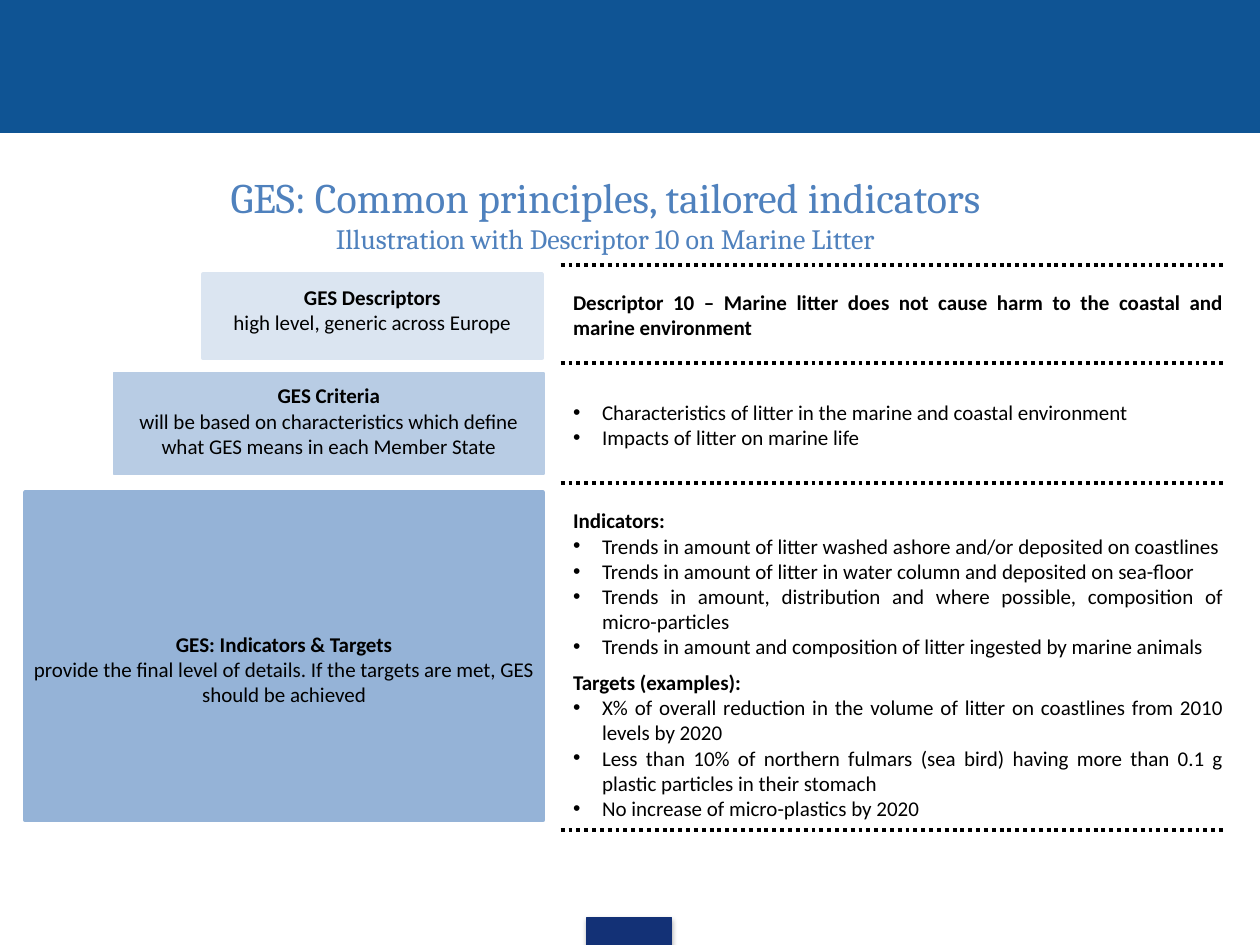
from lxml import etree
from pptx import Presentation
from pptx.dml.color import RGBColor
from pptx.enum.dml import MSO_LINE
from pptx.enum.shapes import MSO_CONNECTOR, MSO_SHAPE
from pptx.enum.text import MSO_ANCHOR, PP_ALIGN
from pptx.oxml.ns import qn
from pptx.util import Inches, Pt

RECTANGLE = MSO_SHAPE.RECTANGLE
STRAIGHT = MSO_CONNECTOR.STRAIGHT
DOTTED = MSO_LINE.ROUND_DOT  # saved as sysDot
TOP, MIDDLE = MSO_ANCHOR.TOP, MSO_ANCHOR.MIDDLE
CENTER, JUSTIFY = PP_ALIGN.CENTER, PP_ALIGN.JUSTIFY

COLORS = {
    "banner": "0F5494", "footer": "133176", "title": "4F81BD", "text": "000000",
    "descriptors": "DBE5F1", "criteria": "B8CCE4", "indicators": "95B3D7",
}

# Name, left, top, width, height, line width, top inset, heading, explanation
LEVELS = [
    ("descriptors", 1.61, 2.18, 2.69, 0.66, 2.5, 0.08, "GES Descriptors",
     "high level, generic across Europe"),
    ("criteria", 0.9, 2.96, 3.42, 0.8, 1, 0.08, "GES Criteria",
     "will be based on characteristics which define what GES means in each Member State"),
    ("indicators", 0.2, 3.91, 4.11, 2.6, 2.5, 1.1, "GES: Indicators & Targets",
     "provide the final level of details. If the targets are met, GES should be achieved"),
]

# Space before in points, heading, bullets
DETAILS = [
    (0, "Descriptor 10 – Marine litter does not cause harm to the coastal and "
        "marine environment", []),
    (34, None, [
        "Characteristics of litter in the marine and coastal environment",
        "Impacts of litter on marine life"]),
    (33, "Indicators:", [
        "Trends in amount of litter washed ashore and/or deposited on coastlines",
        "Trends in amount of litter in water column and deposited on sea-floor",
        "Trends in amount, distribution and where possible, composition of micro-particles",
        "Trends in amount and composition of litter ingested by marine animals"]),
    (6, "Targets (examples):", [
        "X% of overall reduction in the volume of litter on coastlines from 2010 levels by 2020",
        "Less than 10% of northern fulmars (sea bird) having more than 0.1 g plastic "
        "particles in their stomach",
        "No increase of micro-plastics by 2020"]),
]
DIVIDER_OFFSETS = [0.16, 0.94, 1.89, 4.65]


def color(name):
    return RGBColor.from_string(COLORS[name])


def add_rectangle(page, left, top, width, height, fill, line_width=0.75):
    box = page.shapes.add_shape(
        RECTANGLE, Inches(left), Inches(top), Inches(width), Inches(height))
    box.shadow.inherit = False
    box.fill.solid()
    box.fill.fore_color.rgb = color(fill)
    box.line.color.rgb = color(fill)
    box.line.width = Pt(line_width)
    return box


def set_frame(frame, left, top, right, bottom, anchor=TOP):
    frame.word_wrap = True
    frame.vertical_anchor = anchor
    frame.margin_left, frame.margin_top = Inches(left), Inches(top)
    frame.margin_right, frame.margin_bottom = Inches(right), Inches(bottom)


def add_para(frame, text, align, size=12, bold=False, font="Calibri",
             ink="text", space=0, bullet=False):
    first = not frame.paragraphs[0].runs
    para = frame.paragraphs[0] if first else frame.add_paragraph()
    para.alignment = align
    if space:
        para.space_before = Pt(space)
    if bullet:
        props = para._p.get_or_add_pPr()
        props.set("marL", str(Inches(0.23)))
        props.set("indent", str(-Inches(0.23)))
        etree.SubElement(props, qn("a:buFont")).set("typeface", "Arial")
        etree.SubElement(props, qn("a:buChar")).set("char", "•")
    span = para.add_run()
    span.text = text
    span.font.name = font
    span.font.size = Pt(size)
    span.font.bold = bold
    span.font.color.rgb = color(ink)


def add_shadow(box):
    effects = box._element.spPr.find(qn("a:effectLst"))
    shadow = etree.SubElement(
        effects, qn("a:outerShdw"), blurRad=str(Pt(3.1)), dist=str(Pt(1.8)),
        dir="5400000", rotWithShape="0")
    ink = etree.SubElement(shadow, qn("a:srgbClr"), val=COLORS["text"])
    etree.SubElement(ink, qn("a:alpha"), val="35000")


def add_frame_bars(page):
    add_rectangle(page, 0, 0, 10, 1.05, "banner")
    add_shadow(add_rectangle(page, 4.66, 7.28, 0.67, 0.22, "footer"))


def add_title(page, left, top, width, height):
    box = page.shapes.add_textbox(
        Inches(left), Inches(top), Inches(width), Inches(height))
    frame = box.text_frame
    set_frame(frame, 0.1, 0.05, 0.1, 0.05, MIDDLE)
    style = {"font": "Cambria", "ink": "title"}
    add_para(frame, "GES: Common principles, tailored indicators", CENTER, 24, **style)
    add_para(frame, "Illustration with Descriptor 10 on Marine Litter", CENTER, 16, **style)


def add_levels(page):
    for name, left, top, width, height, line_width, inset, heading, explanation in LEVELS:
        box = add_rectangle(page, left, top, width, height, name, line_width)
        set_frame(box.text_frame, 0.04, inset, 0.04, 0.04)
        add_para(box.text_frame, heading, CENTER, bold=True)
        add_para(box.text_frame, explanation, CENTER)


def add_details(page, left, top, width, height):
    box = page.shapes.add_textbox(
        Inches(left), Inches(top), Inches(width), Inches(height))
    frame = box.text_frame
    set_frame(frame, 0.1, 0.36, 0.1, 0.05)
    for space, heading, bullets in DETAILS:
        if heading:
            add_para(frame, heading, JUSTIFY, bold=True, space=space)
            space = 0
        for text in bullets:
            add_para(frame, text, JUSTIFY, space=space, bullet=True)
            space = 0

    # Dotted dividers between the sections
    for offset in DIVIDER_OFFSETS:
        y = Inches(top + offset)
        divider = page.shapes.add_connector(
            STRAIGHT, Inches(left), y, Inches(left + 5.28), y)
        divider.line.color.rgb = color("text")
        divider.line.width = Pt(2.25)
        divider.line.dash_style = DOTTED
        etree.SubElement(divider._element.spPr, qn("a:effectLst"))


def main():
    deck = Presentation()
    deck.slide_width, deck.slide_height = Inches(10), Inches(7.5)
    page = deck.slides.add_slide(deck.slide_layouts[6])
    add_frame_bars(page)
    add_levels(page)
    add_title(page, 1.38, 1.31, 6.85, 0.77)
    add_details(page, 4.45, 1.94, 5.36, 4.88)
    deck.save("out.pptx")


if __name__ == "__main__":
    main()
